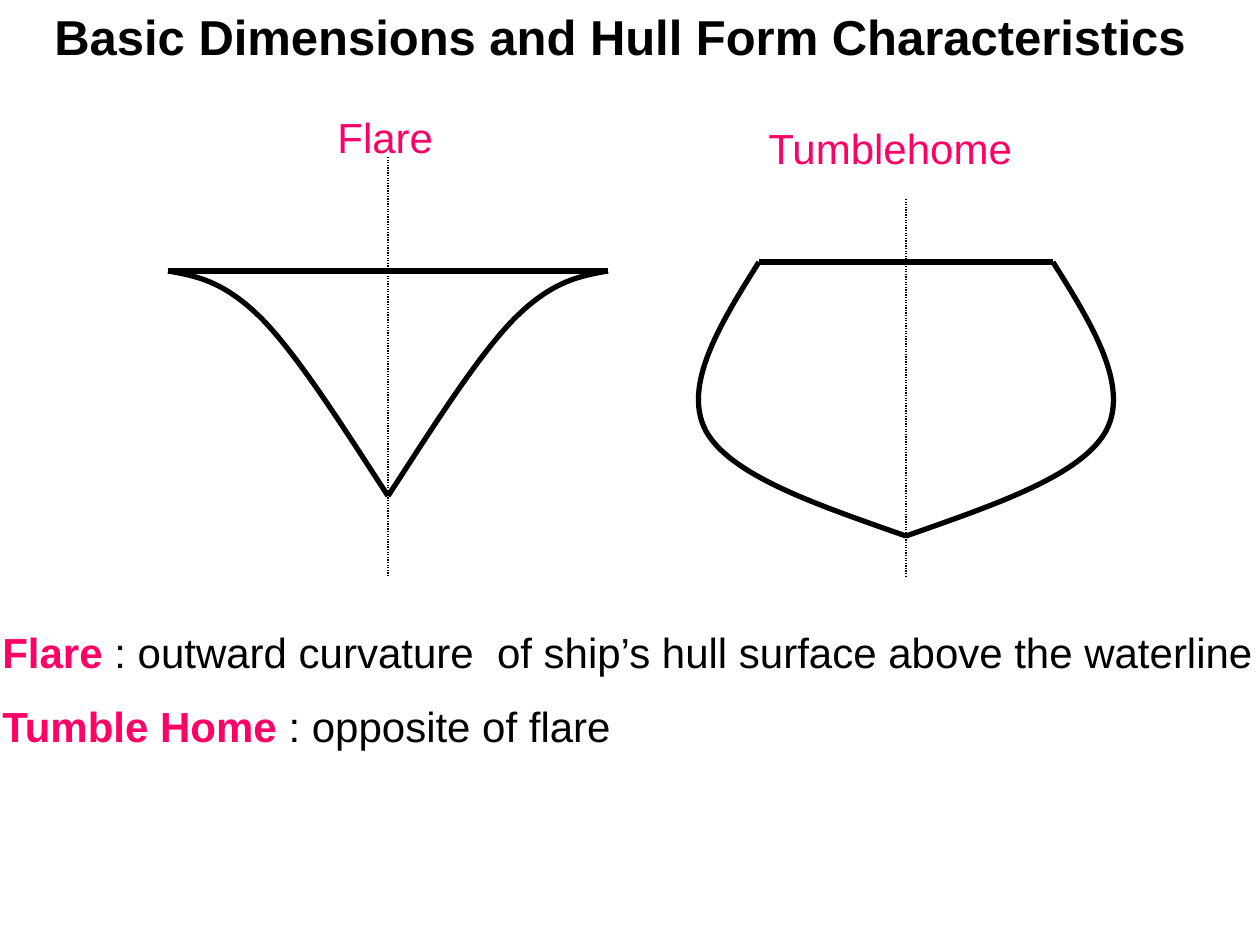
from lxml import etree
from pptx import Presentation
from pptx.dml.color import RGBColor
from pptx.enum.dml import MSO_LINE
from pptx.enum.shapes import MSO_CONNECTOR
from pptx.oxml.ns import qn
from pptx.util import Emu, Pt

STRAIGHT = MSO_CONNECTOR.STRAIGHT
DOTTED = MSO_LINE.ROUND_DOT
EMU_PER_PX = 914400 / 126
FONT = "Arial"
COLORS = {"ink": "000000", "term": "FF0066"}

FLARE_SIDE = [(220, 114), (192, 119), (164, 124), (126, 162),
              (89, 200), (45, 270), (0, 339)]
TUMBLEHOME_SIDE = [(147, 63), (186, 125), (224, 187), (200, 232),
                   (175, 277), (88, 306), (0, 337)]
DEFINITIONS = [
    [("Flare ", "term", True),
     (": outward curvature  of ship’s hull surface above the waterline", "ink", False)],
    [("Tumble Home", "term", True), (" : opposite of flare", "ink", False)],
]


def px(length):
    return Emu(round(length * EMU_PER_PX))


def color(name):
    return RGBColor.from_string(COLORS[name])


def add_text(slide, box, paragraphs, size, wrap=True):
    frame = slide.shapes.add_textbox(*map(px, box)).text_frame
    frame.word_wrap = wrap
    for index, pieces in enumerate(paragraphs):
        paragraph = frame.add_paragraph() if index else frame.paragraphs[0]
        if index:
            paragraph.space_before = Pt(13.5)
        for wording, ink, bold in pieces:
            run = paragraph.add_run()
            run.text = wording
            run.font.name = FONT
            run.font.size = Pt(size)
            run.font.bold = bold
            run.font.color.rgb = color(ink)


def add_line(group, start, end, width, dash=None):
    line = group.shapes.add_connector(STRAIGHT, *map(px, start + end))
    line.line.color.rgb = color("ink")
    line.line.width = Pt(width)
    if dash is not None:
        line.line.dash_style = dash
    etree.SubElement(line._element.spPr, qn("a:effectLst"))


def add_curve(group, points):
    start, *others = [(px(x), px(y)) for x, y in points]
    builder = group.shapes.build_freeform(*start)
    builder.add_line_segments(others, close=False)
    curve = builder.convert_to_shape()
    segments = list(curve._element.iter(qn("a:lnTo")))
    for first in range(0, len(segments), 3):
        bezier = etree.Element(qn("a:cubicBezTo"))
        segments[first].addprevious(bezier)
        for segment in segments[first:first + 3]:
            bezier.append(segment[0])
            segment.getparent().remove(segment)
    curve.shadow.inherit = False
    curve.fill.background()
    curve.line.color.rgb = color("ink")
    curve.line.width = Pt(3)


def add_hull(slide, box, side):
    left, top, width, height = box
    center = left + width // 2
    half_beam, deck = side[0]
    deck_y = top + deck
    group = slide.shapes.add_group_shape()
    add_line(group, (center - half_beam, deck_y), (center + half_beam, deck_y), 3)
    add_line(group, (center, top), (center, top + height), 0.75, DOTTED)
    for direction in (1, -1):
        add_curve(group, [(center + direction * x, top + y) for x, y in side])


def main():
    presentation = Presentation()
    presentation.slide_width = px(1260)
    presentation.slide_height = px(945)
    slide = presentation.slides.add_slide(presentation.slide_layouts[6])

    add_hull(slide, (168, 157, 440, 420), FLARE_SIDE)
    add_hull(slide, (682, 199, 448, 378), TUMBLEHOME_SIDE)
    add_text(slide, (325, 105, 121, 63), [[("Flare", "term", False)]], 24, wrap=False)
    add_text(slide, (756, 116, 315, 63), [[("Tumblehome", "term", False)]], 24)
    add_text(slide, (-10, 620, 1323, 139), DEFINITIONS, 24)
    add_text(slide, (42, 0, 1207, 72),
             [[("Basic Dimensions and Hull Form Characteristics", "ink", True)]], 28)
    presentation.save("out.pptx")


if __name__ == "__main__":
    main()
